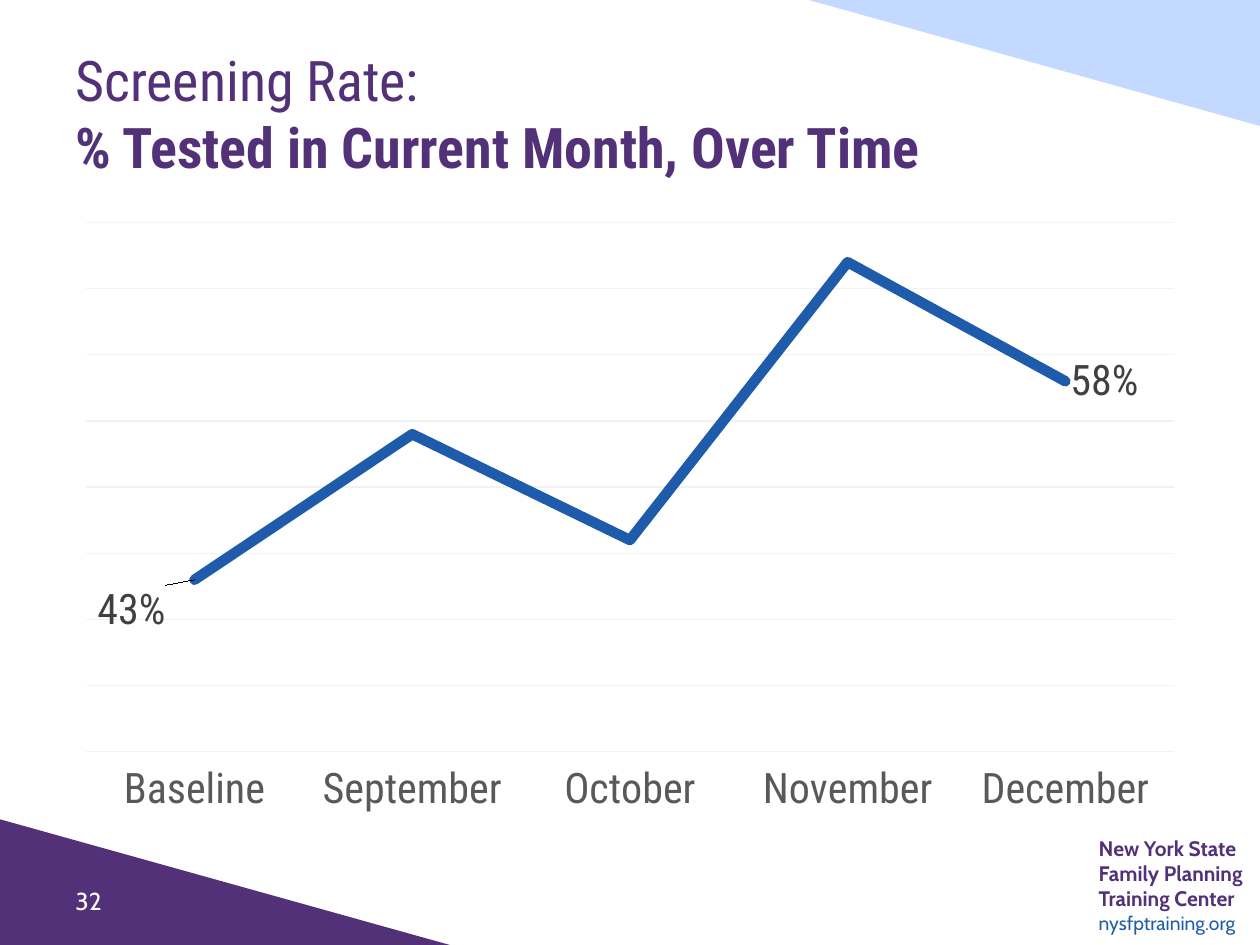
from dataclasses import dataclass

from lxml import etree
from pptx import Presentation
from pptx.chart.data import CategoryChartData as ChartData
from pptx.dml.color import RGBColor as Rgb
from pptx.enum.chart import XL_CHART_TYPE as Kind, XL_LABEL_POSITION as Pos
from pptx.enum.chart import XL_TICK_LABEL_POSITION as TickPos, XL_TICK_MARK as Tick
from pptx.enum.shapes import MSO_SHAPE as Shape
from pptx.enum.text import MSO_ANCHOR as Anchor
from pptx.oxml import parse_xml
from pptx.oxml.ns import nsdecls, qn
from pptx.util import Inches, Pt

COLORS = {"purple": "523178", "pale": "C3D9FF", "link": "1D5CA9", "line": "1E5BAA",
          "grid": "F2F2F2", "axis": "595959", "label": "404040", "white": "FFFFFF"}
HEAD, BODY = "Roboto Condensed", "Cabin"


@dataclass
class Wedge:
    left: float
    top: float
    turn: int
    color: str


@dataclass
class Style:
    size: int
    color: str
    bold: bool = False
    face: str = BODY


@dataclass
class Label:
    point: int
    shift: tuple[float, float] | None = None


WEDGES = [Wedge(-0.01, 6.5, 0, "purple"), Wedge(6.42, 0, 180, "pale")]
RATES = {"Baseline": 0.43, "September": 0.54, "October": 0.46,
         "November": 0.67, "December": 0.58}
LABELS = [Label(0, (-0.09, 0.05)), Label(4)]


def color(name: str) -> Rgb:
    return Rgb.from_string(COLORS[name])


def set_font(font, style: Style) -> None:
    font.name, font.size, font.bold = style.face, Pt(style.size), style.bold
    font.color.rgb = color(style.color)


def add_wedge(slide, wedge: Wedge) -> None:
    shape = slide.shapes.add_shape(Shape.RIGHT_TRIANGLE, Inches(wedge.left),
                                   Inches(wedge.top), Inches(3.58), Inches(1))
    shape.rotation = wedge.turn
    shape.shadow.inherit = False
    shape.fill.solid()
    shape.fill.fore_color.rgb = color(wedge.color)
    shape.line.fill.background()


def add_text(slide, box: tuple, text: str, styles: list[Style],
             anchor=Anchor.MIDDLE, inset: bool = True) -> None:
    """Each run of the text takes the next style in turn."""
    frame = slide.shapes.add_textbox(*map(Inches, box)).text_frame
    frame.word_wrap = True
    frame.vertical_anchor = anchor
    if not inset:
        frame.margin_left = frame.margin_right = 0
        frame.margin_top = frame.margin_bottom = 0
    frame.text = text
    for par in frame.paragraphs:
        par.font.size = Pt(styles[0].size)
    runs = [run for par in frame.paragraphs for run in par.runs]
    for run, style in zip(runs, styles):
        set_font(run.font, style)


def layout_xml(inner: str):
    return parse_xml(f'<c:layout {nsdecls("c")}><c:manualLayout>{inner}'
                     '</c:manualLayout></c:layout>')


def place_plot(chart) -> None:
    area = chart._chartSpace.find(".//" + qn("c:plotArea"))
    for old in area.findall(qn("c:layout")):
        area.remove(old)
    area.insert(0, layout_xml(
        '<c:layoutTarget val="inner"/><c:xMode val="edge"/><c:yMode val="edge"/>'
        '<c:x val="0.02"/><c:y val="0.02"/><c:w val="0.96"/><c:h val="0.87"/>'))


def add_labels(chart, series) -> None:
    style = Style(24, "label", face=HEAD)
    series.data_labels.show_value = False
    for item in LABELS:
        label = series.points[item.point].data_label
        set_font(label.font, style)
        label.position = Pos.RIGHT
    for item, node in zip(LABELS, chart._chartSpace.findall(".//" + qn("c:dLbl"))):
        form = etree.Element(qn("c:numFmt"), formatCode="0%", sourceLinked="0")
        node.insert(1, form)
        if item.shift:
            x, y = item.shift
            node.insert(1, layout_xml(f'<c:x val="{x}"/><c:y val="{y}"/>'))


def add_rates(slide) -> None:
    data = ChartData(number_format="0%")
    data.categories = list(RATES)
    data.add_series("Series 1", list(RATES.values()))
    box = map(Inches, (0.5, 1.67, 9, 4.83))
    chart = slide.shapes.add_chart(Kind.LINE, *box, data).chart
    chart.has_legend = chart.has_title = False
    chart.font.name, chart.font.size = HEAD, Pt(24)
    chart.plots[0].vary_by_categories = False

    # Axes
    months, scale = chart.category_axis, chart.value_axis
    set_font(months.tick_labels.font, Style(24, "axis", face=HEAD))
    months.major_tick_mark = months.minor_tick_mark = Tick.NONE
    months.tick_label_position = TickPos.LOW
    months.format.line.fill.background()
    scale.minimum_scale, scale.maximum_scale = 0.3, 0.7
    scale.major_unit = 0.05
    scale.visible = False
    scale.has_major_gridlines = True
    grid = scale.major_gridlines.format.line
    grid.color.rgb, grid.width = color("grid"), Pt(0.75)

    # Rate line with round ends
    series = chart.plots[0].series[0]
    series.smooth = False
    series.format.line.color.rgb = color("line")
    series.format.line.width = Pt(6)
    stroke = series._element.find(".//" + qn("a:ln"))
    stroke.set("cap", "rnd")
    etree.SubElement(stroke, qn("a:round"))
    add_labels(chart, series)
    place_plot(chart)


def main() -> None:
    deck = Presentation()
    deck.slide_width, deck.slide_height = Inches(10), Inches(7.5)
    slide = deck.slides.add_slide(deck.slide_layouts[6])

    # Corner wedges
    for wedge in WEDGES:
        add_wedge(slide, wedge)

    # Center name and web address
    name = Style(12, "purple", True)
    add_text(slide, (8.72, 6.63, 1.28, 0.81),
             "New York State\nFamily Planning\nTraining Center\nnysfptraining.org",
             [name] * 3 + [Style(11, "link")], Anchor.TOP, inset=False)

    # Title, chart and page number
    add_text(slide, (0.5, 0.3, 9, 1.19),
             "Screening Rate:\v% Tested in Current Month, Over Time",
             [Style(32, "purple", bold, HEAD) for bold in (False, True)])
    add_rates(slide)
    add_text(slide, (0.5, 6.95, 1.4, 0.4), "32", [Style(14, "white")])
    deck.save("out.pptx")


if __name__ == "__main__":
    main()
